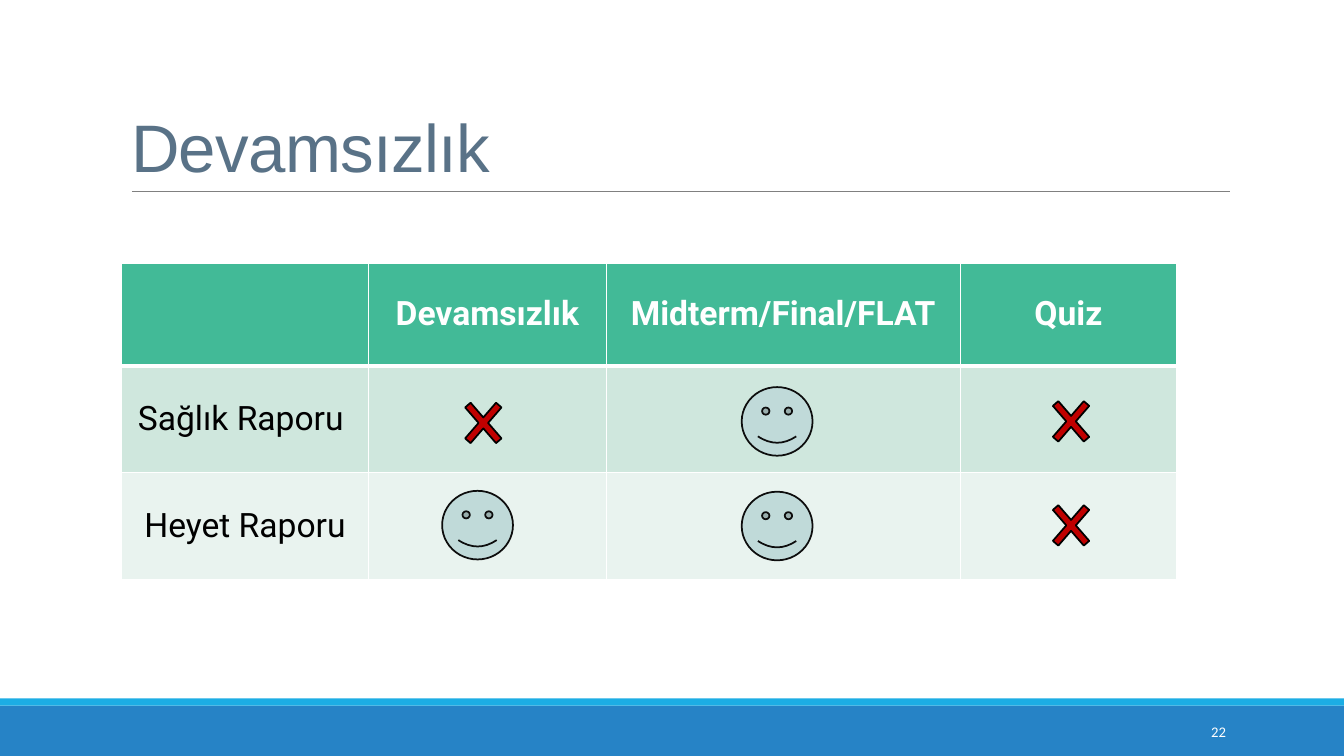
from lxml.etree import SubElement
from pptx import Presentation
from pptx.dml.color import RGBColor
from pptx.enum.shapes import MSO_CONNECTOR, MSO_SHAPE
from pptx.enum.text import MSO_ANCHOR, MSO_AUTO_SIZE, PP_ALIGN
from pptx.oxml.ns import qn
from pptx.util import Pt

WHITE = RGBColor(0xFF, 0xFF, 0xFF)
BLACK = RGBColor(0, 0, 0)
INK = RGBColor(0x0D, 0x0D, 0x0D)
SLATE = RGBColor(0x59, 0x72, 0x87)
GRAY = RGBColor(0x80, 0x80, 0x80)
BLUE = RGBColor(0x26, 0x83, 0xC6)
CYAN = RGBColor(0x1C, 0xAD, 0xE4)
GREEN = RGBColor(0x42, 0xBA, 0x97)
MINT = RGBColor(0xCF, 0xE7, 0xDD)
PALE = RGBColor(0xE9, 0xF3, 0xEF)
RED = RGBColor(0xC0, 0, 0)
FACE = RGBColor(0xC0, 0xDA, 0xD9)


def write(tf, text, size, font, color, bold=False, align=PP_ALIGN.LEFT, spacing=None, track=0):
    p = tf.paragraphs[0]
    p.alignment = align
    if spacing:
        p.line_spacing = spacing
    r = p.add_run()
    r.text = text
    r.font.size = Pt(size)
    r.font.name = font
    r.font.bold = bold
    r.font.color.rgb = color
    if track:
        r._r.get_or_add_rPr().set("spc", str(track))


def add_shape(kind, x, y, w, h, fill, line=None):
    sp = s.shapes.add_shape(kind, Pt(x), Pt(y), Pt(w), Pt(h))
    sp.shadow.inherit = False
    sp.fill.solid()
    sp.fill.fore_color.rgb = fill
    if line is None:
        sp.line.fill.background()
    else:
        sp.line.color.rgb = line
        sp.line.width = Pt(1.25)
    return sp


prs = Presentation()
prs.slide_width, prs.slide_height = Pt(960), Pt(540)
s = prs.slides.add_slide(prs.slide_layouts[5])

add_shape(MSO_SHAPE.RECTANGLE, 0, 504, 960, 36, BLUE)
add_shape(MSO_SHAPE.RECTANGLE, 0, 498.8, 960, 5.2, CYAN)

rule = s.shapes.add_connector(MSO_CONNECTOR.STRAIGHT, Pt(94.3), Pt(136.7), Pt(878.9), Pt(136.7))
rule.line.color.rgb = GRAY
rule.line.width = Pt(0.5)
SubElement(rule._element.spPr, qn("a:effectLst"))

title = s.shapes.title
title.left, title.top, title.width, title.height = Pt(86.4), Pt(22.5), Pt(792), Pt(114.3)
tf = title.text_frame
tf.word_wrap = True
tf.auto_size = MSO_AUTO_SIZE.NONE
tf.vertical_anchor = MSO_ANCHOR.BOTTOM
write(tf, "Devamsızlık", 48, "Arial", SLATE, spacing=0.85, track=-50)

col_widths = [176.4, 169.8, 253, 154.4]
row_heights = [73.4, 76.4, 76.4]
rows = [
    ["", "Devamsızlık", "Midterm/Final/FLAT", "Quiz"],
    ["Sağlık Raporu ", "", "", ""],
    ["Heyet Raporu", "", "", ""],
]
table = s.shapes.add_table(3, 4, Pt(86.8), Pt(187.9), Pt(sum(col_widths)), Pt(sum(row_heights))).table
for col, width in zip(table.columns, col_widths):
    col.width = Pt(width)
for i, (texts, height, fill) in enumerate(zip(rows, row_heights, [GREEN, MINT, PALE])):
    table.rows[i].height = Pt(height)
    for j, text in enumerate(texts):
        cell = table.cell(i, j)
        tcPr = cell._tc.get_or_add_tcPr()
        for side in "LRTB":
            thick = (i, side) in [(0, "B"), (1, "T")]
            ln = SubElement(tcPr, qn("a:ln" + side), w=str(Pt(3 if thick else 1)))
            SubElement(SubElement(ln, qn("a:solidFill")), qn("a:srgbClr"), val=str(WHITE))
        cell.fill.solid()
        cell.fill.fore_color.rgb = fill
        cell.vertical_anchor = MSO_ANCHOR.MIDDLE
        if text:
            write(cell.text_frame, text, 24, "Roboto", WHITE if i == 0 else BLACK,
                  bold=i == 0, align=PP_ALIGN.CENTER)

for x, y in [(324, 277.6), (743.8, 276.5), (743.8, 350.8)]:
    cross = add_shape(MSO_SHAPE.MATH_MULTIPLY, x, y, 42.5, 49, RED, BLACK)
    cross.adjustments[0] = 0.121

for x, y in [(315.8, 350.6), (529.8, 276.5), (529.8, 351.2)]:
    add_shape(MSO_SHAPE.SMILEY_FACE, x, y, 50.6, 49, FACE, INK)

number = s.shapes.add_textbox(Pt(779.8), Pt(508.5), Pt(103), Pt(28.8))
tf = number.text_frame
tf.word_wrap = True
tf.vertical_anchor = MSO_ANCHOR.MIDDLE
write(tf, "22", 10.5, "Calibri", WHITE, align=PP_ALIGN.RIGHT)

prs.save("out.pptx")
